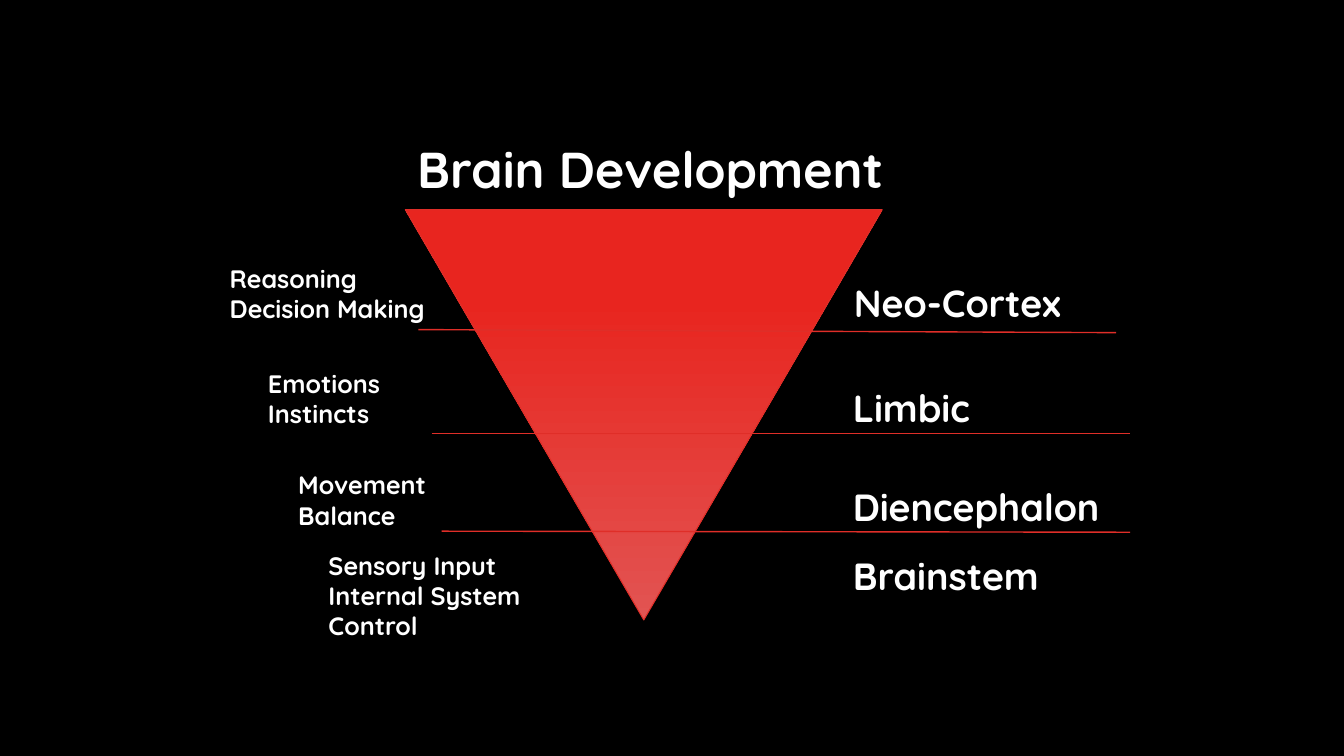
from pptx import Presentation
from pptx.dml.color import RGBColor
from pptx.enum.shapes import MSO_CONNECTOR, MSO_SHAPE
from pptx.enum.text import MSO_AUTO_SIZE, PP_ALIGN
from pptx.oxml.ns import qn
from pptx.util import Inches, Pt
from lxml import etree

TRIANGLE = MSO_SHAPE.ISOSCELES_TRIANGLE
STRAIGHT = MSO_CONNECTOR.STRAIGHT
FIT_SHAPE = MSO_AUTO_SIZE.SHAPE_TO_FIT_TEXT
LEFT, CENTER = PP_ALIGN.LEFT, PP_ALIGN.CENTER

FONT = "Quicksand"
COLORS = {"background": "000000", "text": "FFFFFF", "line": "DF2E28",
          "tip": "E25452", "base": "E8251F"}

# Brain region, its left and top; functions, their left and top
LEVELS = [
    ("Neo-Cortex", 8.37, 2.73, ["Reasoning", "Decision Making"], 2.18, 2.56),
    ("Limbic", 8.36, 3.77, ["Emotions", "Instincts"], 2.56, 3.6),
    ("Diencephalon", 8.36, 4.75, ["Movement", "Balance"], 2.86, 4.61),
    ("Brainstem", 8.36, 5.43, ["Sensory Input", "Internal System Control"], 3.16, 5.41),
]
# Start and end of each line between two levels
DIVIDERS = [(4.15, 3.27, 11.07, 3.3), (4.28, 4.3, 11.21, 4.3), (4.38, 5.27, 11.21, 5.28)]


def color(name):
    return RGBColor.from_string(COLORS[name])


def add_text(slide, box, lines, size, align=LEFT):
    tf = slide.shapes.add_textbox(*map(Inches, box)).text_frame
    tf.word_wrap = True
    tf.auto_size = FIT_SHAPE
    for i, line in enumerate(lines):
        p = tf.add_paragraph() if i else tf.paragraphs[0]
        p.alignment = align
        r = p.add_run()
        r.text = line
        r.font.name = FONT
        r.font.size = Pt(size)
        r.font.bold = True
        r.font.color.rgb = color("text")


def add_pyramid(slide, box):
    """Draw the triangle with its tip down, fading towards the tip."""
    sp = slide.shapes.add_shape(TRIANGLE, *map(Inches, box))
    sp.rotation = 180
    sp.shadow.inherit = False
    sp.fill.gradient()
    sp.fill.gradient_angle = 270
    for stop, name, position in zip(sp.fill.gradient_stops, ("tip", "base"), (0, 0.78)):
        stop.color.rgb = color(name)
        stop.position = position
    sp.line.color.rgb = color("line")
    sp.line.width = Pt(0.75)


def add_divider(slide, ends):
    line = slide.shapes.add_connector(STRAIGHT, *map(Inches, ends))
    line.line.color.rgb = color("line")
    line.line.width = Pt(1)
    etree.SubElement(line._element.spPr, qn("a:effectLst"))


def add_level(slide, region, left, top, functions, functions_left, functions_top):
    add_text(slide, (left, top, 2.95, 0.56), [region], 27)
    add_text(slide, (functions_left, functions_top, 3.04, 0.71), functions, 18)


def main():
    prs = Presentation()
    prs.slide_width, prs.slide_height = Inches(13.33), Inches(7.5)
    slide = prs.slides.add_slide(prs.slide_layouts[6])
    slide.background.fill.solid()
    slide.background.fill.fore_color.rgb = color("background")

    add_pyramid(slide, (4.02, 2.08, 4.73, 4.07))
    for ends in DIVIDERS:
        add_divider(slide, ends)
    add_text(slide, (3.56, 1.32, 5.78, 0.71), ["Brain Development"], 36, CENTER)
    for level in LEVELS:
        add_level(slide, *level)
    prs.save("out.pptx")


if __name__ == "__main__":
    main()
